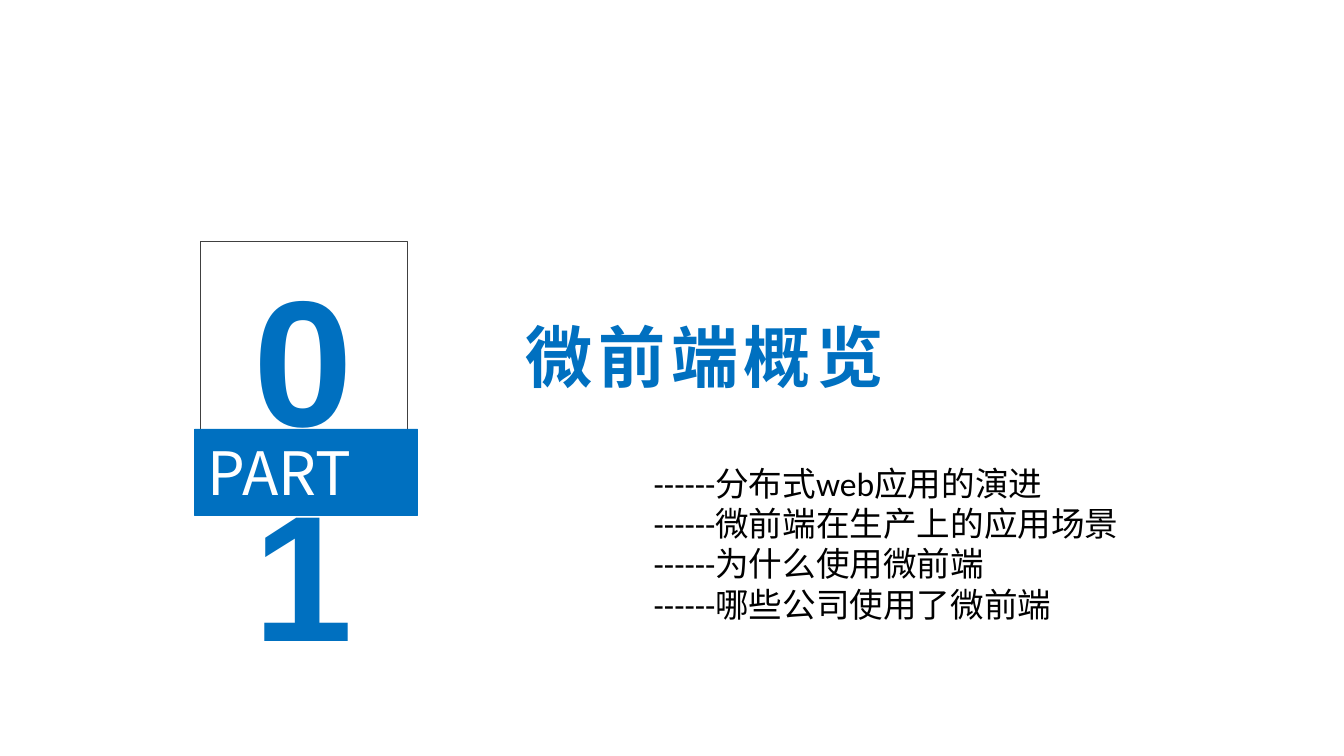
from pptx import Presentation
from pptx.dml.color import RGBColor
from pptx.enum.shapes import MSO_SHAPE as Preset
from pptx.enum.text import MSO_ANCHOR as Anchor, MSO_AUTO_SIZE as AutoSize, PP_ALIGN as Align
from pptx.oxml.ns import qn
from pptx.util import Pt

BLUE = RGBColor(0x00, 0x70, 0xC0)
GREY = RGBColor(0x40, 0x40, 0x40)
WHITE = RGBColor(0xFF, 0xFF, 0xFF)
BLACK = RGBColor(0x00, 0x00, 0x00)

CJK = "Noto Sans CJK SC"
NUMBER_FONT = {"name": "Arial", "size": Pt(96), "bold": True}
LABEL_FONT = {"name": CJK, "size": Pt(32), "bold": False}
TITLE_FONT = {"name": CJK, "size": Pt(36), "bold": True}
TOPIC_FONT = {"name": "Calibri", "size": Pt(18), "bold": False}
FRAME_FORMAT = {
    "auto_size": AutoSize.NONE,
    "word_wrap": True,
    "margin_left": Pt(7.2),
    "margin_right": Pt(7.2),
    "margin_top": Pt(3.6),
    "margin_bottom": Pt(3.6),
}

TOPICS = [
    "------分布式web应用的演进",
    "------微前端在生产上的应用场景",
    "------为什么使用微前端",
    "------哪些公司使用了微前端",
]


def place(shape, left, top, width, height):
    box = {"left": left, "top": top, "width": width, "height": height}
    for name, value in box.items():
        setattr(shape, name, Pt(value))


def paint(shape, color):
    shape.fill.solid()
    shape.fill.fore_color.rgb = color


def write(shape, lines, font, color, align=Align.LEFT, anchor=Anchor.TOP):
    frame = shape.text_frame
    for name, value in {**FRAME_FORMAT, "vertical_anchor": anchor}.items():
        setattr(frame, name, value)
    frame.text = "\n".join(lines)
    for para in frame.paragraphs:
        para.alignment = align
        para.space_before = Pt(0)
        span = para.runs[0]
        for name, value in font.items():
            setattr(span.font, name, value)
        span.font.color.rgb = color
        east_asian = span.font._element.makeelement(qn("a:ea"), {"typeface": CJK})
        span.font._element.find(qn("a:latin")).addnext(east_asian)


def add_panel(group, left, top, width, height, line):
    panel = group.shapes.add_shape(
        Preset.RECTANGLE, Pt(left), Pt(top), Pt(width), Pt(height))
    panel.shadow.inherit = False
    panel.line.color.rgb = line
    panel.line.width = Pt(0.25)
    return panel


def add_part_badge(page, left, top, width, height):
    group = page.shapes.add_group_shape()
    number = add_panel(group, left + 3, top, width - 8.6, height - 22.9, GREY)
    number.fill.background()
    write(number, ["01"], NUMBER_FONT, BLUE, Align.CENTER)
    label = add_panel(group, left, top + height - 46, width, 46, BLUE)
    paint(label, BLUE)
    write(label, ["PART"], LABEL_FONT, WHITE, Align.JUSTIFY, Anchor.MIDDLE)


def add_heading(page, left, top, width, height):
    title = page.shapes.title
    place(title, left, top, width, height)
    paint(title, WHITE)
    write(title, ["微前端概览"], TITLE_FONT, BLUE, anchor=Anchor.MIDDLE)
    title.text_frame.paragraphs[0].runs[0].font._element.set("spc", "300")


def add_topics(page, left, top, width, height):
    body = page.placeholders[1]
    place(body, left, top, width, height)
    write(body, TOPICS, TOPIC_FONT, BLACK)
    for para in body.text_frame.paragraphs:
        para.line_spacing = Pt(21.6)
        properties = para._p.get_or_add_pPr()
        properties.set("marL", "0")
        properties.set("indent", "0")
        properties.append(properties.makeelement(qn("a:buNone"), {}))


def main():
    deck = Presentation()
    deck.slide_width, deck.slide_height = Pt(720), Pt(405)
    page = deck.slides.add_slide(deck.slide_layouts[1])
    add_part_badge(page, 104.2, 129.2, 119.6, 146.6)
    add_heading(page, 274.4, 165.2, 210, 51)
    add_topics(page, 343, 244.3, 266, 94)
    deck.save("out.pptx")


if __name__ == "__main__":
    main()
